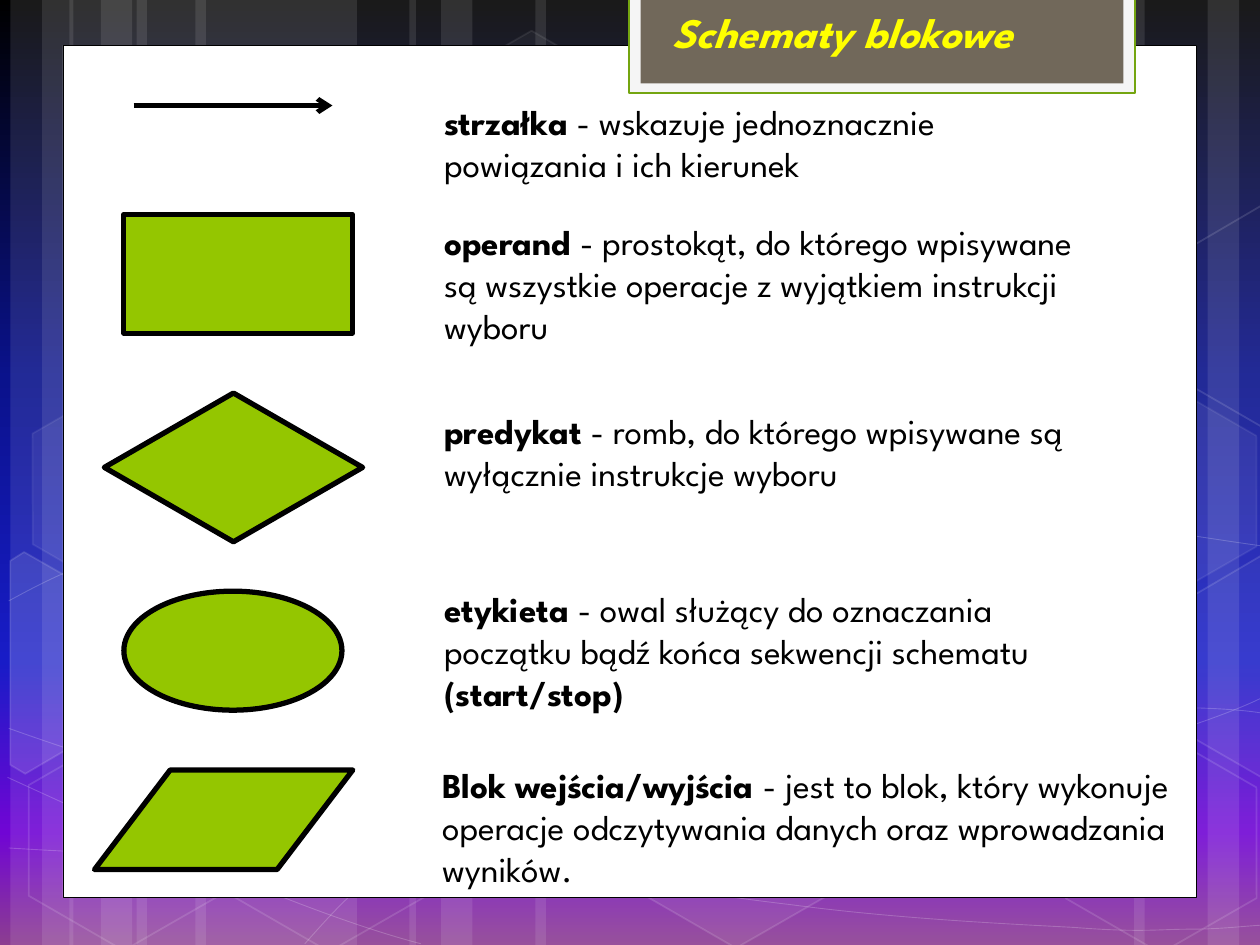
import math

from lxml import etree
from pptx import Presentation
from pptx import util as u
from pptx.dml.color import RGBColor
from pptx.enum import shapes, text
from pptx.oxml.ns import qn

FONT = "League Spartan"
KIND = shapes.MSO_SHAPE
TILT = 30


def paint(fill, parent, color, alpha=100):
    """Give a fill a hex colour and opacity in percent, or no fill."""
    if color is None:
        fill.background()
        return
    fill.solid()
    fill.fore_color.rgb = RGBColor.from_string(color)
    if alpha < 100:
        value = etree.SubElement(parent.find(qn("a:solidFill"))[0], qn("a:alpha"))
        value.set("val", str(alpha * 1000))


def style(shape, fill=None, alpha=100, line=None, width=1, line_alpha=100):
    shape.shadow.inherit = False
    properties = shape.element.spPr
    paint(shape.fill, properties, fill, alpha)
    shape.line.width = u.Pt(width)
    paint(shape.line.fill, properties.find(qn("a:ln")), line, line_alpha)


presentation = Presentation()
presentation.slide_width, presentation.slide_height = u.Pt(720), u.Pt(540)
slide = presentation.slides.add_slide(presentation.slide_layouts[5])

# Background gradient, from top to bottom
background = slide.background.fill
background.gradient()
background.gradient_angle = 270
stops = slide.element.find(".//" + qn("a:gsLst"))
for stop in list(stops):
    stops.remove(stop)
for position, color in [(0, "000000"), (40, "0A128C"), (70, "181CC7"),
                        (88, "7005D4"), (100, "8C3D91")]:
    stop = etree.SubElement(stops, qn("a:gs"), pos=str(position * 1000))
    etree.SubElement(stop, qn("a:srgbClr"), val=color)

# Vertical stripes: left, width, rotation
for left, width, rotation in [
        (78, 126, 0), (6, 36, 0), (24, 60, 0), (111.6, 126, 0), (39.6, 36, 0), (57.6, 60, 0),
        (528, 126, 180), (690, 36, 180), (648, 60, 180),
        (306, 222, 0), (234, 36, 0), (252, 60, 0)]:
    stripe = slide.shapes.add_shape(KIND.RECTANGLE, u.Pt(left), 0, u.Pt(width), u.Pt(540))
    stripe.rotation = rotation
    style(stripe, "FFFFFF", 10)

# Thin curves: a start point, then three Bezier points per segment
curves = [
    [(5, 484.6), (44, 487), (83, 489), (137, 488), (191, 487), (258, 486), (330, 479),
     (402, 472), (504, 458), (570, 444), (636, 431), (703, 409), (725, 396.7)],
    [(5, 343.4), (26, 332), (47, 321), (87, 310), (128, 300), (186, 284), (250, 279),
     (314, 274), (392, 273), (471, 279), (550, 284), (682, 307), (725, 312.5)],
    [(4.3, 444.2), (91, 484), (178, 523), (240.5, 539.3)],
    [(5, 416.2), (27, 424), (50, 432), (92, 444), (134, 454), (197, 472), (257, 485),
     (317, 497), (392, 510), (452, 517), (512, 525), (576, 528), (614, 530),
     (652, 533), (662, 531), (680, 531), (699, 531), (712, 529), (725, 528.5)],
    [(174.2, 539.3), (187, 525), (200, 510), (217, 498), (235, 485), (259, 470), (279, 460),
     (300, 450), (312, 446), (338, 438), (364, 431), (413, 421), (438, 416),
     (464, 411), (467, 411), (490, 410), (512, 408), (547, 405), (572, 405),
     (597, 404), (638, 404.6), (638, 404.6), (654, 404.6), (670, 404.6), (686, 404.6),
     (699, 405), (711, 406), (718, 407), (724, 408), (722, 407), (724.3, 407.5)],
]
for curve in curves:
    points = [(u.Pt(x), u.Pt(y)) for x, y in curve]
    builder = slide.shapes.build_freeform(*points[0])
    builder.add_line_segments(points[1:], close=False)
    shape = builder.convert_to_shape()
    outline = shape.element.find(".//" + qn("a:path"))
    lines = outline.findall(qn("a:lnTo"))
    for first in range(0, len(lines), 3):
        bezier = etree.SubElement(outline, qn("a:cubicBezTo"))
        for line in lines[first:first + 3]:
            bezier.append(line[0])
            outline.remove(line)
    style(shape, line="FFFFFF", width=0.5, line_alpha=20)

# Hexagons: left, top, fill opacity, line opacity
for left, top, alpha, line_alpha in [
        (240.5, 25.9, 4, 8), (357.8, 424.1, 6, 12), (7.9, 425.5, 0, 12), (10.1, 224.6, 7, 8),
        (125.3, 426.2, 0, 12), (542.2, 326.2, 10, 12), (600.5, 427, 0, 12),
        (600.5, 226.1, 7, 8)]:
    hexagon = slide.shapes.add_shape(KIND.HEXAGON, u.Pt(left), u.Pt(top), u.Pt(126), u.Pt(109.4))
    hexagon.adjustments[0] = 0.29
    hexagon.rotation = TILT
    style(hexagon, "FFFFFF" if alpha else None, alpha, "FFFFFF", 1, line_alpha)

# Hexagons cut by the slide edge: corners as seen, turned back about the centre
cosine, sine = math.cos(math.radians(TILT)), math.sin(math.radians(TILT))
for alpha, (center_x, center_y), corners in [
        (10, (25.9, 385.2), [(5.8, 320.4), (13.7, 315.4), (69.1, 347), (68.4, 410.4),
                             (14.4, 442.1), (5.8, 437)]),
        (4, (709.2, 374.4), [(666.7, 349.2), (720.7, 317.5), (726.5, 321.1), (726.5, 441.4),
                             (721.4, 444.2), (666.7, 412.6)]),
        (0, (709.2, 173.5), [(666.7, 149), (720.7, 117.4), (727.2, 121), (726.5, 241.2),
                             (721.4, 244.1), (666.7, 212.4)])]:
    points = []
    for x, y in corners:
        dx, dy = x - center_x, y - center_y
        points.append((u.Pt(center_x + dx * cosine + dy * sine),
                       u.Pt(center_y - dx * sine + dy * cosine)))
    builder = slide.shapes.build_freeform(*points[0])
    builder.add_line_segments(points[1:])
    shape = builder.convert_to_shape()
    shape.rotation = TILT
    style(shape, "FFFFFF" if alpha else None, alpha, "FFFFFF", 1, 12)

# White panel, title tab and flowchart symbols
for kind, box, fill, line, width in [
        (KIND.RECTANGLE, (36, 25.9, 648, 486.9), "FFFFFF", "000000", 0.5),
        (KIND.RECTANGLE, (359.3, -1.4, 289.4, 54.7), "F5F5F5", "74A510", 1.25),
        (KIND.RECTANGLE, (366, -1.4, 276, 49), "71685A", None, 1),
        (KIND.RECTANGLE, (70.8, 122.5, 130.5, 67.9), "94C600", "000000", 3),
        (KIND.DIAMOND, (59.6, 224.6, 147.6, 85), "94C600", "000000", 3),
        (KIND.OVAL, (70.8, 337.8, 124.6, 68), "94C600", "000000", 3),
        (KIND.PARALLELOGRAM, (54, 440, 147.6, 56.9), "94C600", "000000", 3)]:
    shape = slide.shapes.add_shape(kind, *map(u.Pt, box))
    if kind == KIND.PARALLELOGRAM:
        shape.adjustments[0] = 0.76
    style(shape, fill, 100, line, width)

# Arrow symbol
arrow = slide.shapes.add_connector(shapes.MSO_CONNECTOR.STRAIGHT,
                                   u.Pt(76.4), u.Pt(60.3), u.Pt(190), u.Pt(60.3))
arrow.line.width = u.Pt(2.75)
arrow_line = arrow.element.spPr.find(qn("a:ln"))
paint(arrow.line.fill, arrow_line, "000000")
etree.SubElement(arrow_line, qn("a:tailEnd"), type="arrow")
etree.SubElement(arrow.element.spPr, qn("a:effectLst"))

# Title and descriptions: each run is (text, bold)
title = slide.shapes.title
title.element.getparent().append(title.element)
body_font = {"name": FONT, "size": u.Pt(20), "italic": False}
title_font = {"name": FONT, "size": u.Pt(24), "italic": True}
for box, runs in [
        ((377, 0, 255, 36), [("Schematy blokowe", True)]),
        ((246.7, 54, 374.4, 55.4),
         [("strzałka", True), (" - wskazuje jednoznacznie powiązania i ich kierunek", False)]),
        ((246.7, 122.4, 374.4, 80),
         [("operand", True), (" - prostokąt, do którego wpisywane są wszystkie operacje "
                              "z wyjątkiem instrukcji wyboru", False)]),
        ((246.7, 230.4, 374.4, 80),
         [("predykat", True),
          (" - romb, do którego wpisywane są wyłącznie instrukcje wyboru", False)]),
        ((246.7, 332.2, 374.4, 80),
         [("etykieta", True),
          (" - owal służący do oznaczania początku bądź końca sekwencji schematu ", False),
          ("(start/stop)", True)]),
        ((245.5, 432.7, 437.8, 104.4),
         [("Blok wejścia/wyjścia", True),
          (" - jest to blok, który wykonuje operacje odczytywania danych oraz "
           "wprowadzania wyników.", False)])]:
    is_title = box[1] == 0
    place = list(map(u.Pt, box))
    shape = title if is_title else slide.shapes.add_textbox(*place)
    shape.left, shape.top, shape.width, shape.height = place
    frame = shape.text_frame
    frame.word_wrap = True
    frame.auto_size = text.MSO_AUTO_SIZE.NONE
    frame.vertical_anchor = text.MSO_ANCHOR.TOP
    paragraph = frame.paragraphs[0]
    paragraph.alignment = text.PP_ALIGN.LEFT
    for words, bold in runs:
        run = paragraph.add_run()
        run.text = words
        run.font.bold = bold
        for name, value in (title_font if is_title else body_font).items():
            setattr(run.font, name, value)
        run.font.color.rgb = RGBColor.from_string("FFFF00" if is_title else "000000")

presentation.save("out.pptx")
